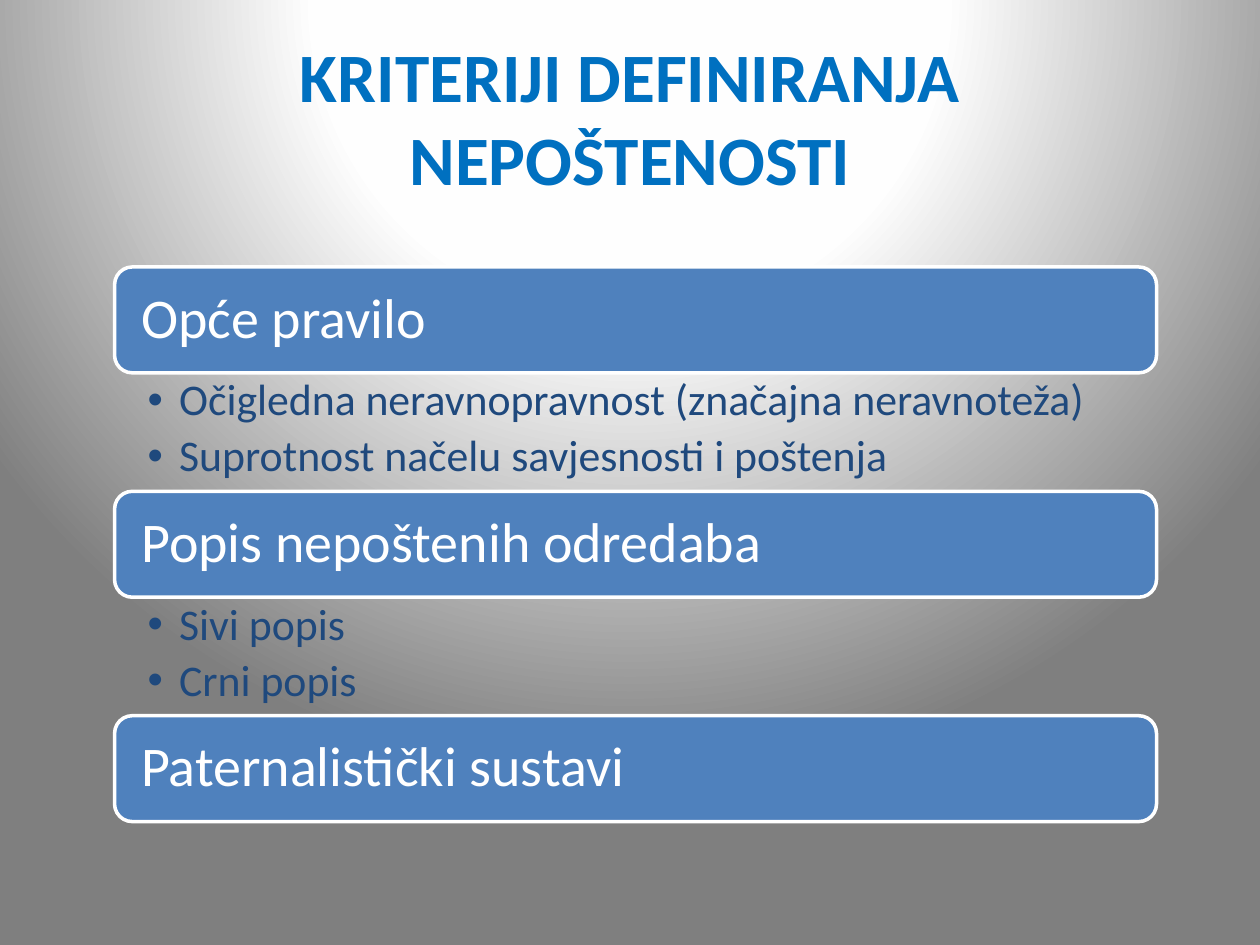
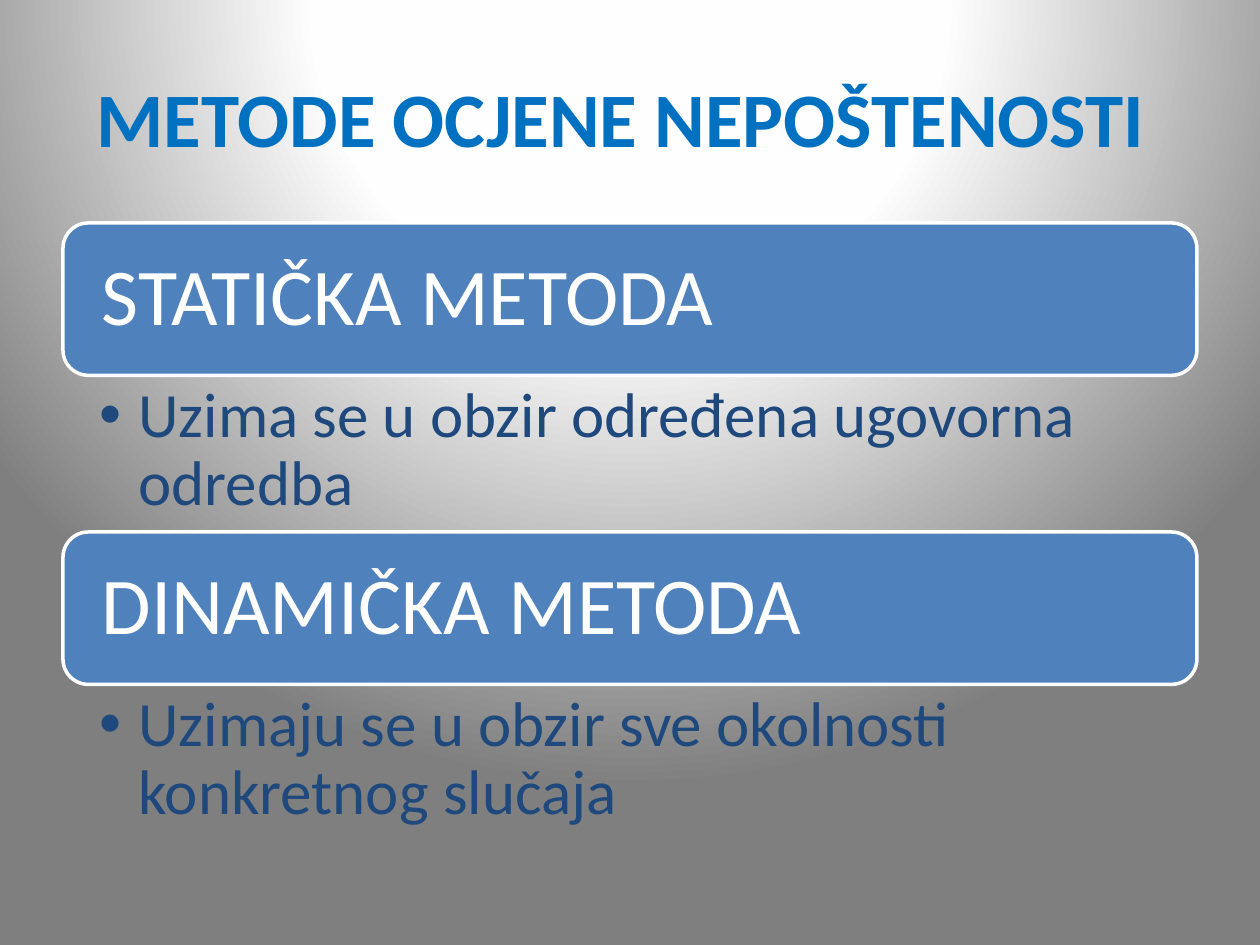
from dataclasses import dataclass

from lxml import etree
from pptx import Presentation
from pptx import oxml
from pptx.dml.color import RGBColor
from pptx.enum import shapes, text
from pptx.oxml import ns
from pptx.util import Pt

FONT = "Calibri"
TITLE_BLUE = RGBColor(0x00, 0x70, 0xC0)
BAND_BLUE = RGBColor(0x4F, 0x81, 0xBD)
POINT_NAVY = RGBColor(0x1F, 0x49, 0x7D)
WHITE = RGBColor(0xFF, 0xFF, 0xFF)
GLOW_STOPS = [(0, WHITE), (40, RGBColor(0xFE, 0xFE, 0xFE)),
              (100, RGBColor(0x7F, 0x7F, 0x7F))]
TITLE_BOX = (36, 21.6, 648, 90)


@dataclass
class OutlineStyle:
    band_height: float
    band_size: float
    band_inset: float
    points_height: float
    points_size: float
    points_insets: tuple  # left, top, right, bottom
    hanging: float


CRITERIA_STYLE = OutlineStyle(60.5, 32, 12.24, 67.7, 25, (18.9, 3, 18, 3), 18)
METHODS_STYLE = OutlineStyle(87.1, 46, 18, 89.5, 36, (20.6, 4.3, 25.6, 4.3), 22.5)


def paint_background(slide):
    """Light glow from the top edge, fading to grey."""
    stops = "".join(f'<a:gs pos="{pos * 1000}"><a:srgbClr val="{color}"/></a:gs>'
                    for pos, color in GLOW_STOPS)
    background = oxml.parse_xml(
        f'<p:bg {ns.nsdecls("p", "a")}><p:bgPr><a:gradFill rotWithShape="1">'
        f'<a:gsLst>{stops}</a:gsLst><a:path path="circle">'
        '<a:fillToRect l="50000" t="-80000" r="50000" b="180000"/></a:path>'
        '</a:gradFill><a:effectLst/></p:bgPr></p:bg>')
    slide.element[0].insert(0, background)


def set_frame(frame, insets, anchor):
    frame.word_wrap = True
    frame.vertical_anchor = anchor
    (frame.margin_left, frame.margin_top,
     frame.margin_right, frame.margin_bottom) = map(Pt, insets)


def style_paragraph(paragraph, size, color, align=text.PP_ALIGN.LEFT):
    paragraph.alignment = align
    paragraph.font.name = FONT
    paragraph.font.size = Pt(size)
    paragraph.font.color.rgb = color


def add_title(slide, wording, size, box):
    frame = slide.shapes.add_textbox(*map(Pt, box)).text_frame
    set_frame(frame, (7.2, 3.6, 7.2, 3.6), text.MSO_ANCHOR.MIDDLE)
    title = frame.paragraphs[0]
    title.text = wording
    style_paragraph(title, size, TITLE_BLUE, text.PP_ALIGN.CENTER)
    title.font.bold = True


def add_band(slide, heading, box, style):
    band = slide.shapes.add_shape(shapes.MSO_SHAPE.ROUNDED_RECTANGLE, *map(Pt, box))
    band.shadow.inherit = False
    band.fill.solid()
    band.fill.fore_color.rgb = BAND_BLUE
    band.line.color.rgb = WHITE
    band.line.width = Pt(2)
    set_frame(band.text_frame, [style.band_inset] * 4, text.MSO_ANCHOR.MIDDLE)
    line = band.text_frame.paragraphs[0]
    line.text = heading
    line.line_spacing = 0.9
    style_paragraph(line, style.band_size, WHITE)


def add_points(slide, points, box, style):
    frame = slide.shapes.add_textbox(*map(Pt, box)).text_frame
    set_frame(frame, style.points_insets, text.MSO_ANCHOR.TOP)
    frame.text = "\n".join(points)
    for point in frame.paragraphs:
        style_paragraph(point, style.points_size, POINT_NAVY)
        point.line_spacing = 0.9
        point.space_after = Pt(0.2 * style.points_size)
        # Hanging bullet
        properties = point._p.get_or_add_pPr()
        properties.set("marL", str(Pt(style.hanging)))
        properties.set("indent", str(-Pt(style.hanging)))
        bullet_font = etree.SubElement(properties, ns.qn("a:buFont"))
        bullet_font.set("typeface", "Arial")
        etree.SubElement(properties, ns.qn("a:buChar")).set("char", "•")
        # The default run properties come after the bullet
        properties.append(properties.find(ns.qn("a:defRPr")))


def add_outline(slide, sections, left, top, width, style):
    """Stack bands, each followed by its points."""
    for heading, points in sections:
        add_band(slide, heading, (left, top, width, style.band_height), style)
        top += style.band_height
        if points:
            add_points(slide, points, (left, top, width, style.points_height), style)
            top += style.points_height


def add_outline_slide(deck, title, title_size, sections, place, style):
    slide = deck.slides.add_slide(deck.slide_layouts[6])
    paint_background(slide)
    add_title(slide, title, title_size, TITLE_BOX)
    add_outline(slide, sections, *place, style)


def main():
    deck = Presentation()
    deck.slide_width, deck.slide_height = Pt(720), Pt(540)

    add_outline_slide(
        deck, "KRITERIJI DEFINIRANJA NEPOŠTENOSTI", 39.6,
        [("Opće pravilo", ["Očigledna neravnopravnost (značajna neravnoteža)",
                           "Suprotnost načelu savjesnosti i poštenja"]),
         ("Popis nepoštenih odredaba", ["Sivi popis", "Crni popis"]),
         ("Paternalistički sustavi", [])],
        (65.5, 152.6, 595.4), CRITERIA_STYLE)

    add_outline_slide(
        deck, "METODE OCJENE NEPOŠTENOSTI ", 44,
        [("STATIČKA METODA", ["Uzima se u obzir određena ugovorna odredba"]),
         ("DINAMIČKA METODA", ["Uzimaju se u obzir sve okolnosti konkretnog slučaja"])],
        (36, 127.4, 648), METHODS_STYLE)

    deck.save("out.pptx")


if __name__ == "__main__":
    main()
